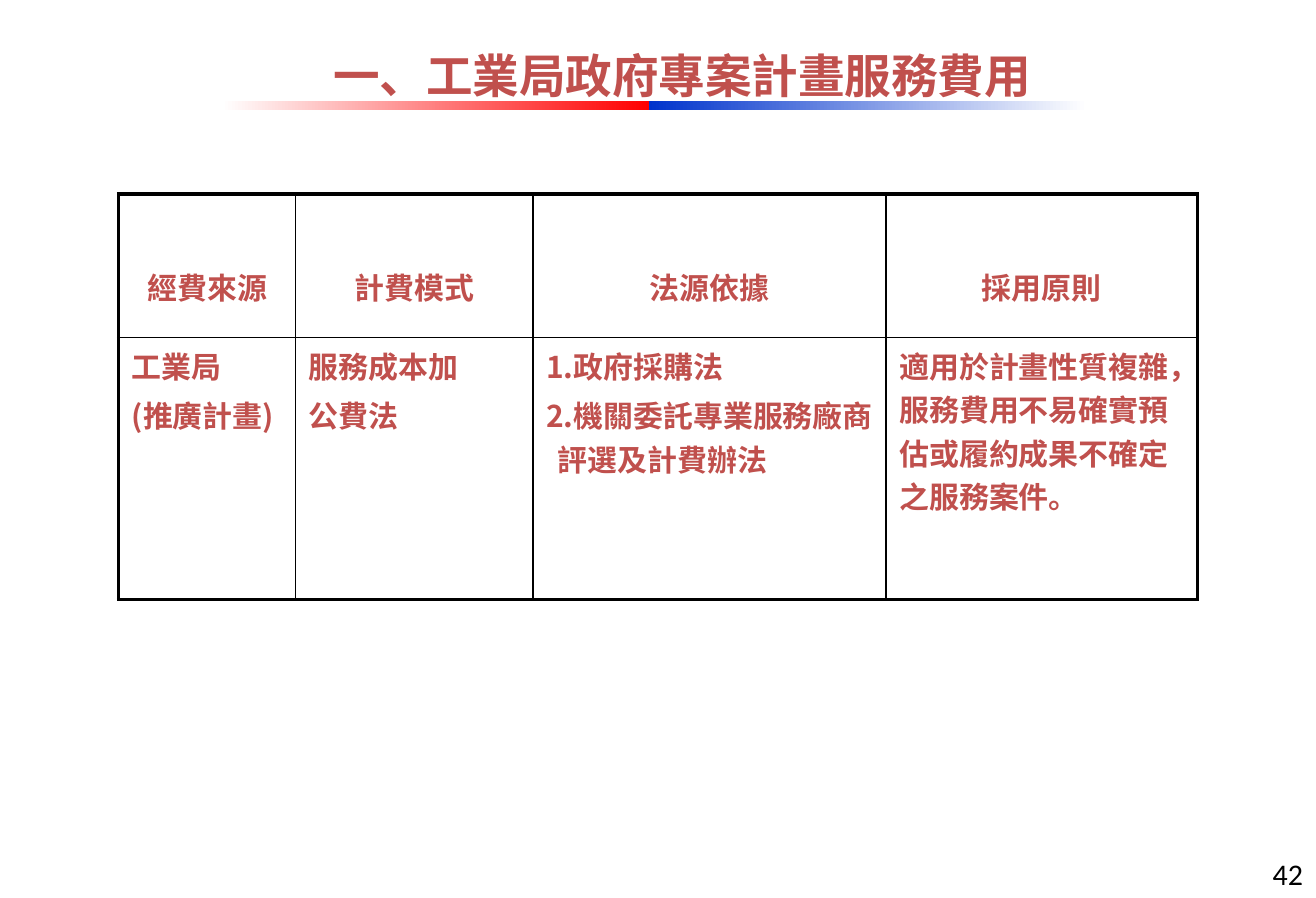
from lxml import etree
from pptx import Presentation
from pptx.dml.color import RGBColor
from pptx.enum.shapes import MSO_SHAPE
from pptx.enum.text import MSO_ANCHOR, PP_ALIGN
from pptx.oxml.ns import qn
from pptx.util import Inches, Pt

BRICK = RGBColor(0xC0, 0x50, 0x4D)
RED = RGBColor(0xFF, 0x00, 0x00)
BLUE = RGBColor(0x00, 0x33, 0xCC)
WHITE = RGBColor(0xFF, 0xFF, 0xFF)
BLACK = RGBColor(0x00, 0x00, 0x00)

CJK_FONT = "Noto Sans CJK SC"
THIN, THICK = 1, 2.25

COLUMN_WIDTHS = [1.48, 1.98, 2.95, 2.6]
ROW_HEIGHTS = [1.2, 2.19]
ROWS = [
    [["經費來源"], ["計費模式"], ["法源依據"], ["採用原則"]],
    [
        ["工業局", "(推廣計畫)"],
        ["服務成本加", "公費法"],
        ["1.政府採購法", "2.機關委託專業服務廠商評選及計費辦法"],
        ["適用於計畫性質複雜，服務費用不易確實預估或履約成果不確定之服務案件。"],
    ],
]
LAW_COLUMN = 2


class SlideBuilder:
    def __init__(self, presentation):
        self.slide = presentation.slides.add_slide(presentation.slide_layouts[5])

    def add_run(self, paragraph, text, size, font=CJK_FONT, color=BRICK, bold=True):
        run = paragraph.add_run()
        run.text = text
        run.font.size = Pt(size)
        run.font.name = font
        run.font.bold = bold
        run.font.color.rgb = color
        latin = run.font._element.find(qn("a:latin"))
        east_asian = etree.Element(qn("a:ea"), typeface=CJK_FONT)
        latin.addnext(east_asian)

    def gradient_bar(self, left, width, start, end):
        bar = self.slide.shapes.add_shape(
            MSO_SHAPE.RECTANGLE, Inches(left), Inches(0.84), Inches(width), Inches(0.08))
        bar.shadow.inherit = False
        bar.line.fill.background()
        bar.fill.gradient()
        bar.fill.gradient_angle = 0
        for stop, position, color in zip(bar.fill.gradient_stops, (0, 1), (start, end)):
            stop.position = position
            stop.color.rgb = color

    def title(self, text):
        title = self.slide.shapes.title
        title.left, title.top = Inches(0.93), Inches(0)
        title.width, title.height = Inches(9.53), Inches(1.25)
        frame = title.text_frame
        frame.vertical_anchor = MSO_ANCHOR.MIDDLE
        paragraph = frame.paragraphs[0]
        paragraph.alignment = PP_ALIGN.CENTER
        self.add_run(paragraph, text, 28, font="Arial")

    def page_number(self, text):
        box = self.slide.shapes.add_textbox(
            Inches(8.87), Inches(7.09), Inches(2.11), Inches(0.41))
        frame = box.text_frame
        frame.word_wrap = True
        frame.vertical_anchor = MSO_ANCHOR.MIDDLE
        paragraph = frame.paragraphs[0]
        paragraph.alignment = PP_ALIGN.RIGHT
        self.add_run(paragraph, text, 18, font="Calibri", color=BLACK, bold=False)

    def cell_borders(self, cell, widths):
        properties = cell._tc.get_or_add_tcPr()
        for side, width in widths.items():
            line = etree.SubElement(properties, qn(f"a:ln{side}"), w=str(Pt(width)))
            fill = etree.SubElement(line, qn("a:solidFill"))
            etree.SubElement(fill, qn("a:srgbClr"), val=str(BLACK))

    def cell_text(self, cell, lines, header, hanging):
        frame = cell.text_frame
        for index, text in enumerate(lines):
            paragraph = frame.add_paragraph() if index else frame.paragraphs[0]
            if index:
                paragraph.space_before = Pt(3.6)
            if header:
                paragraph.alignment = PP_ALIGN.CENTER
                paragraph.line_spacing = 2.5
            if hanging:
                properties = paragraph._p.get_or_add_pPr()
                properties.set("marL", str(Inches(0.1)))
                properties.set("indent", str(Inches(-0.1)))
            self.add_run(paragraph, text, 18)

    def table(self, left, top):
        last_row, last_column = len(ROWS) - 1, len(COLUMN_WIDTHS) - 1
        table = self.slide.shapes.add_table(
            len(ROWS), len(COLUMN_WIDTHS), Inches(left), Inches(top),
            Inches(sum(COLUMN_WIDTHS)), Inches(sum(ROW_HEIGHTS))).table
        table.first_row = table.horz_banding = False
        for column, width in zip(table.columns, COLUMN_WIDTHS):
            column.width = Inches(width)
        for row, height in zip(table.rows, ROW_HEIGHTS):
            row.height = Inches(height)
        for r, row in enumerate(ROWS):
            for c, lines in enumerate(row):
                cell = table.cell(r, c)
                cell.margin_left = cell.margin_right = Inches(0.11)
                cell.margin_top = cell.margin_bottom = Inches(0.05)
                # Thick outer frame, thin inner grid
                self.cell_borders(cell, {
                    "L": THICK if c == 0 else THIN,
                    "R": THICK if c == last_column else THIN,
                    "T": THICK if r == 0 else THIN,
                    "B": THICK if r == last_row else THIN,
                })
                cell.fill.background()
                self.cell_text(cell, lines, header=r == 0,
                               hanging=r > 0 and c == LAW_COLUMN)


def main():
    presentation = Presentation()
    presentation.slide_width = Inches(10.99)
    presentation.slide_height = Inches(7.5)
    builder = SlideBuilder(presentation)

    # Title with its two-colour rule
    builder.gradient_bar(1.85, 3.57, WHITE, RED)
    builder.gradient_bar(5.42, 3.66, BLUE, WHITE)
    builder.title("一、工業局政府專案計畫服務費用")

    # Fee table
    builder.table(0.99, 1.62)

    # Page number
    builder.page_number("42")

    presentation.save("out.pptx")


if __name__ == "__main__":
    main()
